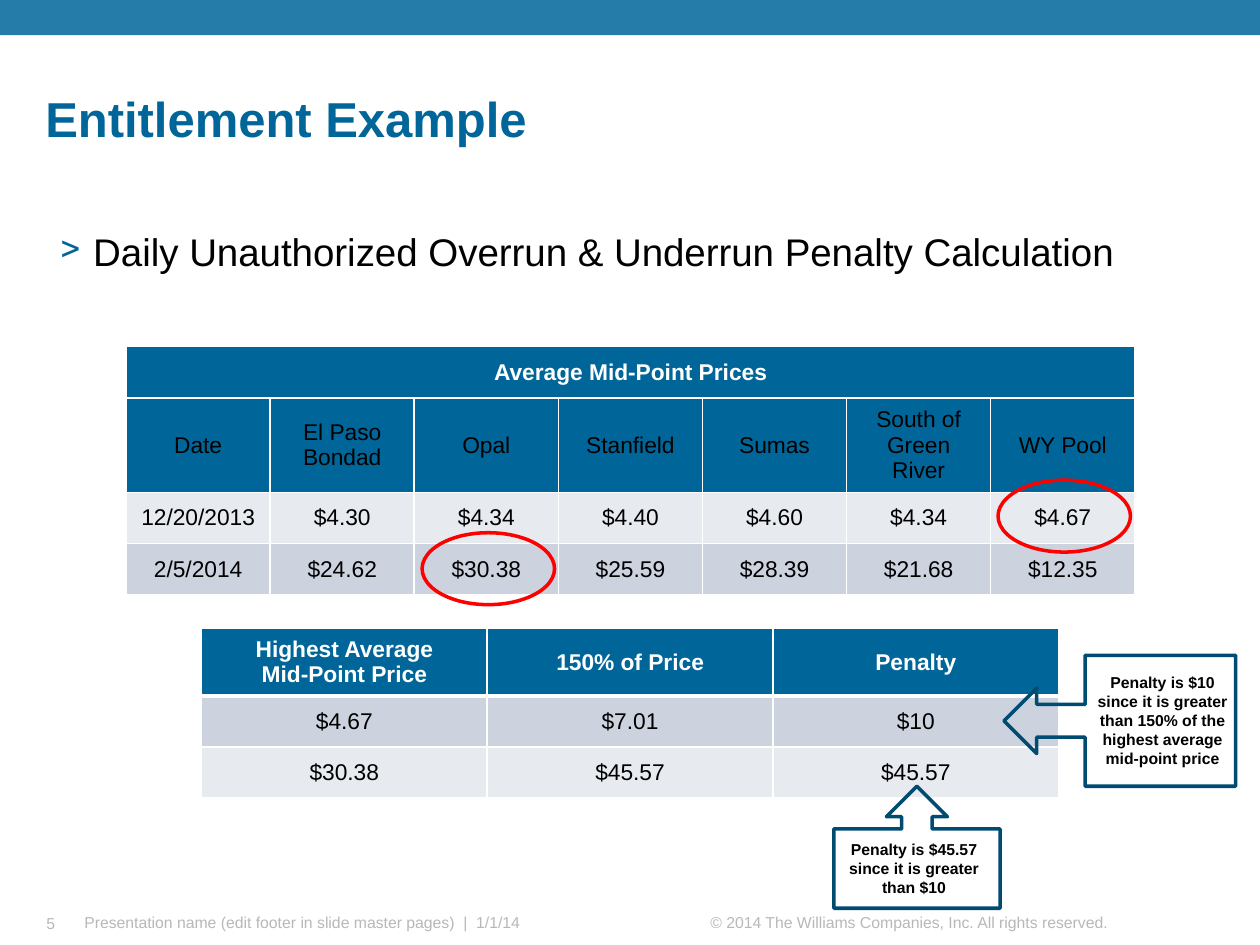
from lxml import etree
from pptx import Presentation
from pptx import util as u
from pptx.dml.color import RGBColor
from pptx.enum import shapes, text
from pptx.oxml import ns

COLORS = {
    "blue": "006699", "navy": "004B71", "red": "FF0000", "black": "000000",
    "white": "FFFFFF", "footer": "B8B8B8", "light": "E7EAEF", "band": "CCD3DE",
}
ALIGN = text.PP_ALIGN
ANCHOR = text.MSO_ANCHOR


def rgb(name):
    """Return the named colour."""
    return RGBColor.from_string(COLORS[name])


def cm(*lengths):
    """Convert centimetres to slide lengths."""
    return [u.Cm(length) for length in lengths]


def style(paragraph, size, color, bold=False, align=ALIGN.LEFT, spacing=None):
    """Format a whole paragraph."""
    paragraph.alignment = align
    paragraph.line_spacing = spacing
    font = paragraph.font
    font.name, font.size, font.bold = "Arial", u.Pt(size), bold
    font.color.rgb = rgb(color)


def add_text(slide, box, wording, anchor=ANCHOR.TOP, inset=None):
    """Add a wrapping text box and return its frame."""
    frame = slide.shapes.add_textbox(*cm(*box)).text_frame
    frame.word_wrap = True
    frame.vertical_anchor = anchor
    if inset is not None:
        frame.margin_left = frame.margin_right = u.Cm(inset)
        frame.margin_top = frame.margin_bottom = u.Cm(inset)
    frame.text = wording
    return frame


def add_outline(slide, kind, box, color):
    """Add an unfilled shape with a coloured outline."""
    outline = slide.shapes.add_shape(kind, *cm(*box))
    outline.shadow.inherit = False
    outline.fill.background()
    outline.line.color.rgb = rgb(color)
    outline.line.width = u.Pt(2)
    return outline


def add_banner(slide, box):
    """Draw the translucent band across the top."""
    banner = slide.shapes.add_shape(shapes.MSO_SHAPE.RECTANGLE, *cm(*box))
    banner.shadow.inherit = False
    banner.fill.solid()
    banner.fill.fore_color.rgb = rgb("blue")
    banner.line.fill.background()
    tint = banner.fill._xPr.find(".//" + ns.qn("a:srgbClr"))
    etree.SubElement(tint, ns.qn("a:alpha"), val="85000")


def add_heading(slide, box):
    """Place the slide title."""
    title = slide.shapes.title
    title.left, title.top, title.width, title.height = cm(*box)
    title.text_frame.text = "Entitlement Example"
    title.text_frame.vertical_anchor = ANCHOR.BOTTOM
    style(title.text_frame.paragraphs[0], 28, "blue", True, spacing=0.9)


def add_topic(slide, box):
    """Place the bulleted topic line."""
    wording = "Daily Unauthorized Overrun & Underrun Penalty Calculation"
    topic = add_text(slide, box, wording).paragraphs[0]
    props = topic._p.get_or_add_pPr()
    indent = u.Cm(0.66)
    props.set("marL", str(indent))
    props.set("indent", str(-indent))
    tint = etree.SubElement(props, ns.qn("a:buClr"))
    etree.SubElement(tint, ns.qn("a:srgbClr"), val=COLORS["blue"])
    etree.SubElement(props, ns.qn("a:buSzPct"), val="90000")
    etree.SubElement(props, ns.qn("a:buChar"), char=">")
    style(topic, 22, "black", spacing=0.9)


def border_cell(cell, bottom):
    """Give a cell white borders, with its own bottom width."""
    props = cell._tc.get_or_add_tcPr()
    for index, (edge, points) in enumerate(
            [("lnL", 1), ("lnR", 1), ("lnT", 1), ("lnB", bottom)]):
        line = etree.Element(ns.qn("a:" + edge), w=str(u.Pt(points)))
        fill = etree.SubElement(line, ns.qn("a:solidFill"))
        etree.SubElement(fill, ns.qn("a:srgbClr"), val=COLORS["white"])
        props.insert(index, line)


def add_price_table(slide, box, heights, rows, fills, header_rule):
    """Add a table with a bold header and equal columns."""
    left, top, width = box
    columns = len(rows[-1])
    table = slide.shapes.add_table(
        len(rows), columns, *cm(left, top, width, sum(heights))).table
    table.first_row = table.horz_banding = False
    for column in table.columns:
        column.width = u.Cm(width / columns)
    for r, (height, values, fill) in enumerate(zip(heights, rows, fills)):
        table.rows[r].height = u.Cm(height)
        header = r == 0
        for c in range(columns):
            cell = table.cell(r, c)
            cell.fill.solid()
            cell.fill.fore_color.rgb = rgb(fill)
            border_cell(cell, header_rule if header else 1)
            cell.vertical_anchor = ANCHOR.MIDDLE
            cell.text = values[c] if c < len(values) else ""
            for line in cell.text_frame.paragraphs:
                style(line, 13, "white" if header else "black", header, ALIGN.CENTER)
        if len(values) < columns:
            table.cell(r, 0).merge(table.cell(r, columns - 1))


def add_callout(slide, box, label_offset, label_height, wording, rotation=0):
    """Add an arrow callout, drawn within its box, and its label."""
    left, top, width, height = box
    if rotation:
        shift = (width - height) / 2
        outline_box = (left + shift, top - shift, height, width)
    else:
        outline_box = box
    arrow = add_outline(slide, shapes.MSO_SHAPE.UP_ARROW_CALLOUT, outline_box, "navy")
    arrow.rotation = rotation
    dx, dy = label_offset
    label = add_text(slide, (left + dx, top + dy, 3.43, label_height), wording)
    style(label.paragraphs[0], 9, "black", True, ALIGN.CENTER)


def add_footer(slide, box):
    """Place page number, presentation name and copyright."""
    left, top, width, height = box
    page = add_text(slide, (left, top + 0.08, 0.91, 0.41), "5", ANCHOR.BOTTOM, 0)
    style(page.paragraphs[0], 9, "footer", align=ALIGN.RIGHT, spacing=0.9)
    name = add_text(slide, (left + 1.25, top, 12.34, height),
                    "Presentation name (edit footer in slide master pages)  |  1/1/14",
                    ANCHOR.MIDDLE)
    style(name.paragraphs[0], 9, "footer", spacing=0.9)
    rights = add_text(slide, (left + width - 12.07, top, 12.07, height),
                      "© 2014 The Williams Companies, Inc. All rights reserved.",
                      ANCHOR.BOTTOM)
    style(rights.paragraphs[0], 9, "footer", align=ALIGN.RIGHT, spacing=0.9)


def main():
    """Build the slide."""
    deck = Presentation()
    deck.slide_width, deck.slide_height = cm(25.4, 19.05)
    slide = deck.slides.add_slide(deck.slide_layouts[5])
    add_banner(slide, (0, -0.05, 25.4, 0.76))
    add_footer(slide, (0.2, 18.31, 22.38, 0.61))
    add_topic(slide, (0.97, 4.57, 23.5, 12.45))
    add_heading(slide, (0.66, 0.81, 24.08, 2.31))
    prices = [
        ["Average Mid-Point Prices"],
        ["Date", "El Paso Bondad", "Opal", "Stanfield", "Sumas",
         "South of Green River", "WY Pool"],
        ["12/20/2013", "$4.30", "$4.34", "$4.40", "$4.60", "$4.34", "$4.67"],
        ["2/5/2014", "$24.62", "$30.38", "$25.59", "$28.39", "$21.68", "$12.35"],
    ]
    add_price_table(slide, (2.54, 6.99, 20.34), [1.03, 1.79, 1.03, 1.03],
                    prices, ["blue", "blue", "light", "band"], 1)
    penalties = [
        ["Highest Average\nMid-Point Price", "150% of Price", "Penalty"],
        ["$4.67", "$7.01", "$10"],
        ["$30.38", "$45.57", "$45.57"],
    ]
    add_price_table(slide, (4.06, 12.67, 17.28), [1.27, 1.03, 1.03],
                    penalties, ["blue", "band", "light"], 3)
    for left, top in [(20.12, 9.68), (8.51, 10.74)]:
        add_outline(slide, shapes.MSO_SHAPE.OVAL, (left, top, 2.67, 1.45), "red")
    add_callout(slide, (20.24, 13.21, 4.67, 2.64), (1.48, 0.23), 2.18,
                "Penalty is $10 since it is greater than 150% of the "
                "highest average mid-point price", 270)
    add_callout(slide, (16.81, 15.85, 3.35, 2.46), (-0.1, 0.96), 1.42,
                "Penalty is $45.57 since it is greater than $10")
    deck.save("out.pptx")


if __name__ == "__main__":
    main()
